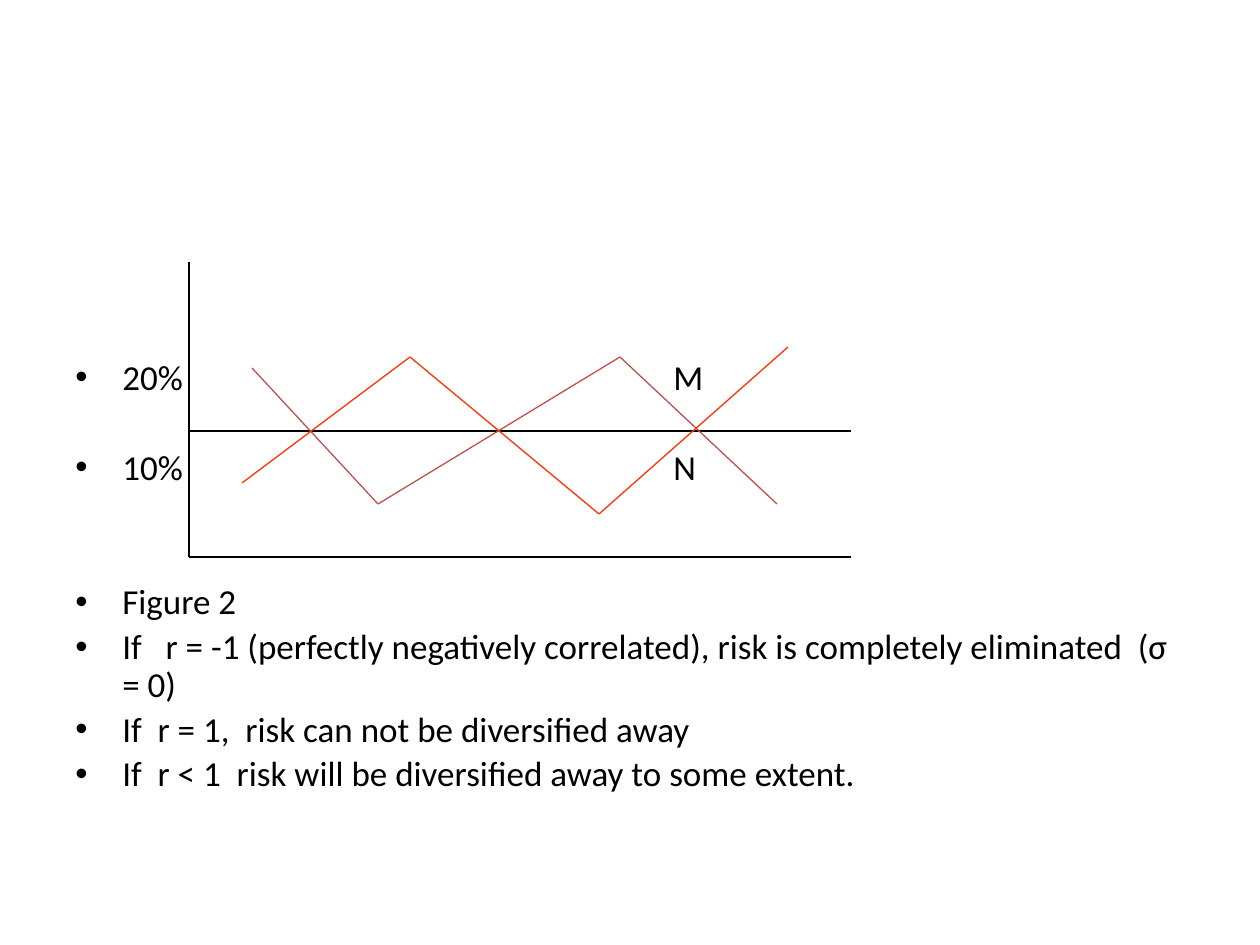
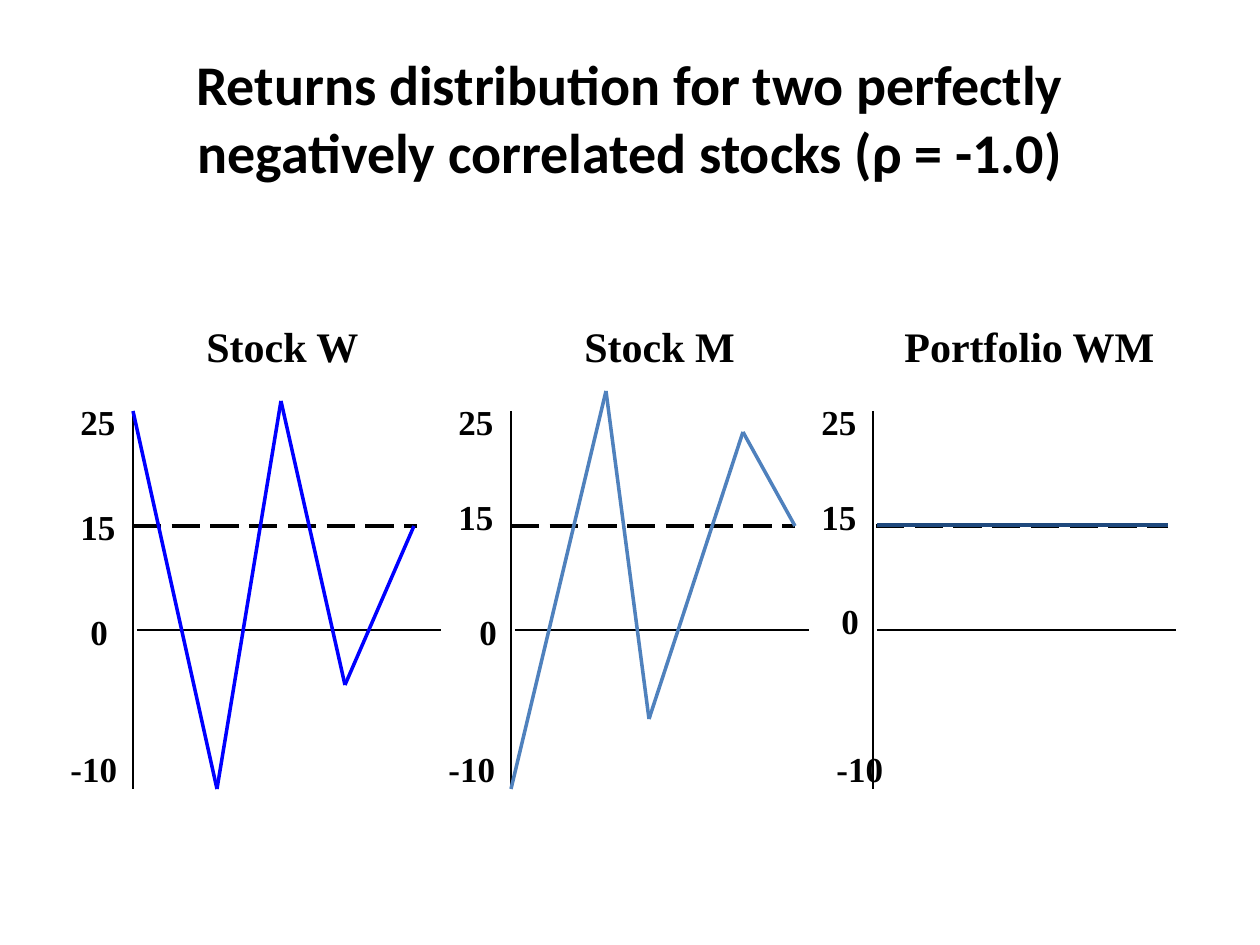
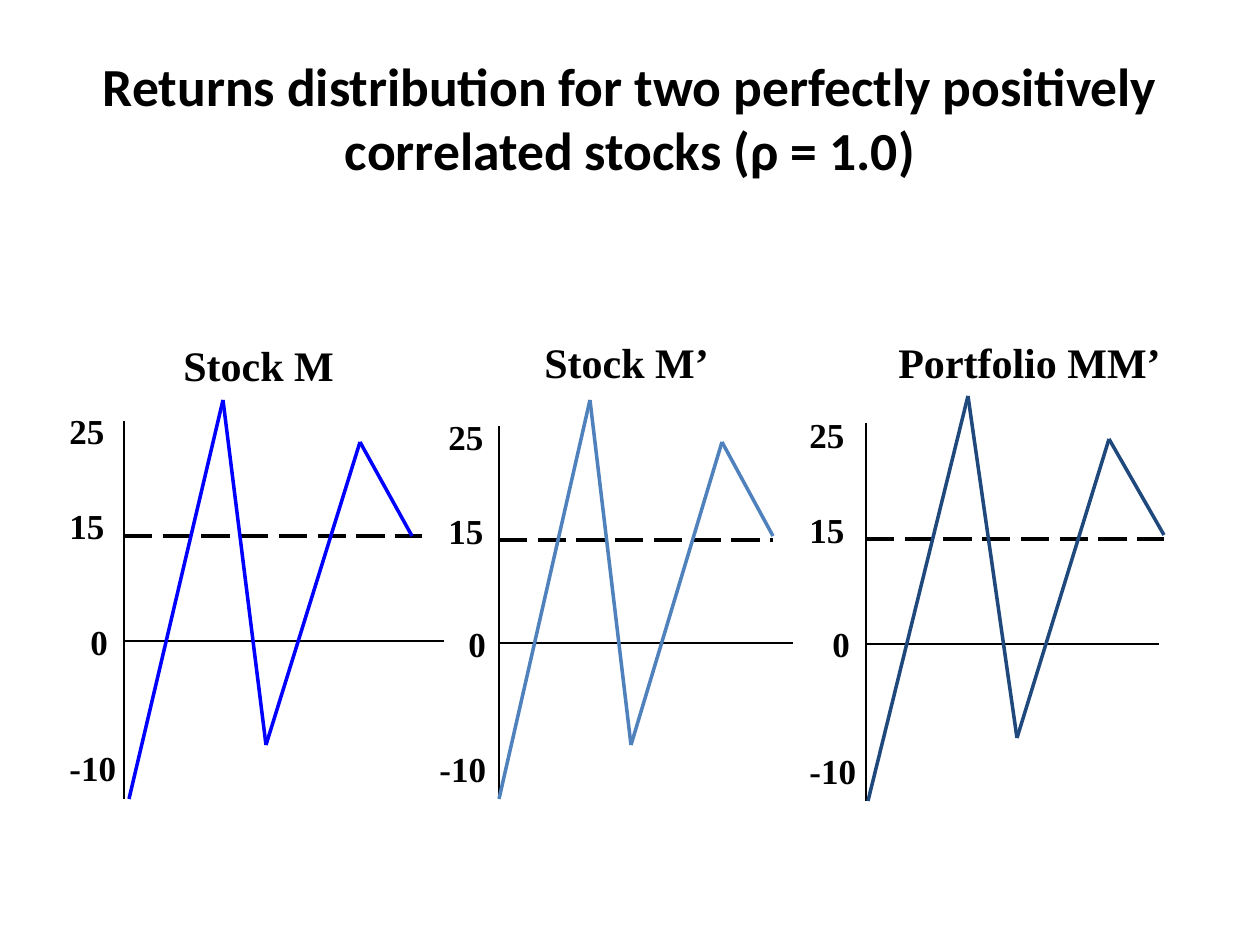
from dataclasses import dataclass
from itertools import pairwise

from lxml.etree import SubElement
from pptx import Presentation
from pptx.dml.color import RGBColor
from pptx.enum.dml import MSO_LINE
from pptx.enum.shapes import MSO_CONNECTOR
from pptx.enum.text import MSO_ANCHOR, MSO_AUTO_SIZE, PP_ALIGN
from pptx.oxml.ns import qn
from pptx.shapes.shapetree import GroupShapes, SlideShapes
from pptx.slide import Slide
from pptx.text.text import TextFrame, _Paragraph
from pptx.util import Emu, Pt

# Shared look
BLACK = RGBColor(0x00, 0x00, 0x00)
BRICK = RGBColor(0xC0, 0x50, 0x4D)
ORANGE = RGBColor(0xFF, 0x33, 0x00)
BLUE = RGBColor(0x00, 0x00, 0xFF)
STEEL = RGBColor(0x4F, 0x81, 0xBD)
NAVY = RGBColor(0x1F, 0x49, 0x7D)
BODY_FONT = "Calibri"
CHART_FONT = "Times New Roman"
PX_PER_INCH = 126
LABEL_HEIGHT, NAME_HEIGHT = 54, 63
LABEL_WIDTHS = {1: 45, 2: 64, 3: 76}  # by number of characters
SERIES_COLORS = (BLUE, STEEL, NAVY)

Point = tuple[int, int]
Shapes = SlideShapes | GroupShapes


@dataclass(frozen=True)
class Bullet:
    text: str
    lines_skipped: int = 0


@dataclass(frozen=True)
class Trend:
    color: RGBColor
    points: tuple[Point, ...]


@dataclass(frozen=True)
class Panel:
    name: str
    name_at: Point
    name_width: int
    axis_x: int
    axis_span: Point
    zero_y: int
    zero_span: Point
    mean_y: int
    mean_span: Point
    labels: dict[str, Point]
    returns: tuple[Point, ...]


# Slide 1: risk figure
BULLETS = (
    Bullet("20%\tM"),
    Bullet("10%\tN", 1),
    Bullet("Figure 2", 2),
    Bullet("If   r = -1 (perfectly negatively correlated), risk is completely eliminated  (σ = 0)"),
    Bullet("If  r = 1,  risk can not be diversified away"),
    Bullet("If  r < 1  risk will be diversified away to some extent."),
)
TRENDS = (
    Trend(BLACK, ((189, 262), (189, 557), (851, 557))),
    Trend(BLACK, ((189, 431), (851, 431))),
    Trend(BRICK, ((252, 368), (378, 504), (620, 357), (777, 504))),
    Trend(ORANGE, ((242, 483), (410, 357), (599, 514), (788, 347))),
)

# Slide 2: negative correlation
NEGATIVE_PANELS = (
    Panel("Stock W", (194, 314), 192, 133, (411, 789), 630, (137, 441), 526, (133, 417),
          {"25": (68, 394), "15": (68, 499), "0": (78, 604), "-10": (58, 741)},
          ((133, 411), (217, 789), (281, 401), (345, 685), (414, 526))),
    Panel("Stock M", (572, 314), 186, 511, (411, 789), 630, (515, 809), 526, (511, 795),
          {"25": (446, 394), "15": (446, 489), "0": (467, 604), "-10": (436, 741)},
          ((511, 789), (606, 391), (649, 719), (743, 432), (795, 526))),
    Panel("Portfolio WM", (892, 314), 284, 873, (411, 789), 630, (877, 1176), 526, (876, 1168),
          {"25": (809, 394), "15": (809, 489), "0": (829, 593), "-10": (824, 741)},
          ((877, 525), (1168, 525))),
)

# Slide 3: positive correlation
POSITIVE_PANELS = (
    Panel("Stock M", (171, 333), 186, 124, (421, 799), 641, (124, 444), 536, (124, 422),
          {"25": (57, 403), "15": (57, 498), "0": (78, 614), "-10": (57, 740)},
          ((129, 799), (223, 400), (266, 745), (360, 442), (412, 536))),
    Panel("Stock M’", (532, 330), 198, 499, (426, 799), 643, (499, 793), 540, (499, 773),
          {"25": (436, 409), "15": (436, 503), "0": (456, 616), "-10": (427, 741)},
          ((499, 799), (590, 400), (631, 745), (722, 442), (773, 536))),
    Panel("Portfolio MM’", (886, 330), 291, 866, (423, 801), 644, (866, 1159), 539, (866, 1164),
          {"25": (797, 407), "15": (797, 502), "0": (820, 616), "-10": (797, 743)},
          ((868, 801), (968, 396), (1017, 738), (1109, 439), (1164, 535))),
)


def px(length: int) -> Emu:
    return Emu(round(length * 914400 / PX_PER_INCH))


# Drawing helpers
def add_line(shapes: Shapes, start: Point, end: Point, color: RGBColor,
             weight: float, dash: MSO_LINE | None = None) -> None:
    line = shapes.add_connector(MSO_CONNECTOR.STRAIGHT, *map(px, start + end))
    line.line.color.rgb = color
    line.line.width = Pt(weight)
    if dash is not None:
        line.line.dash_style = dash
    SubElement(line._element.spPr, qn("a:effectLst"))


def add_path(shapes: Shapes, points: tuple[Point, ...], color: RGBColor, weight: float) -> None:
    for start, end in pairwise(points):
        add_line(shapes, start, end, color, weight)


def add_frame(shapes: Shapes, at: Point, size: Point, wrap: bool = True) -> TextFrame:
    frame = shapes.add_textbox(*map(px, at + size)).text_frame
    frame.word_wrap = wrap
    return frame


def add_run(paragraph: _Paragraph, text: str, font: str, size: float, bold: bool) -> None:
    run = paragraph.add_run()
    run.text = text
    run.font.name = font
    run.font.size = Pt(size)
    run.font.bold = bold
    run.font.color.rgb = BLACK


def add_title(slide: Slide, text: str, size: float) -> None:
    frame = add_frame(slide.shapes, (63, 38), (1134, 158))
    frame.vertical_anchor = MSO_ANCHOR.MIDDLE
    frame.paragraphs[0].alignment = PP_ALIGN.CENTER
    add_run(frame.paragraphs[0], text, BODY_FONT, size, True)


def add_caption(shapes: Shapes, text: str, at: Point, size: Point, points: int) -> None:
    frame = add_frame(shapes, at, size, wrap=False)
    frame.auto_size = MSO_AUTO_SIZE.SHAPE_TO_FIT_TEXT
    add_run(frame.paragraphs[0], text, CHART_FONT, points, True)


def add_bullets(slide: Slide) -> None:
    frame = add_frame(slide.shapes, (63, 220), (1134, 624))
    frame.margin_top = px(140)
    for index, bullet in enumerate(BULLETS):
        paragraph = frame.add_paragraph() if index else frame.paragraphs[0]
        paragraph.line_spacing = 0.9
        paragraph.space_before = Pt(4 + 25.7 * bullet.lines_skipped) if index else Pt(0)
        add_run(paragraph, bullet.text, BODY_FONT, 20, False)
        properties = paragraph._p.get_or_add_pPr()
        properties.set("marL", str(px(47)))
        properties.set("indent", str(-px(47)))
        SubElement(properties, qn("a:buFont"), typeface="Arial")
        SubElement(properties, qn("a:buChar"), char="•")
        if "\t" in bullet.text:
            stops = SubElement(properties, qn("a:tabLst"))
            SubElement(stops, qn("a:tab"), pos=str(px(598)), algn="l")


def add_panel(slide: Slide, panel: Panel, color: RGBColor) -> None:
    shapes = slide.shapes.add_group_shape().shapes
    top, bottom = panel.axis_span
    zero_start, zero_end = panel.zero_span
    mean_start, mean_end = panel.mean_span
    add_line(shapes, (panel.axis_x, top), (panel.axis_x, bottom), BLACK, 1)
    add_line(shapes, (zero_start, panel.zero_y), (zero_end, panel.zero_y), BLACK, 1)
    add_line(shapes, (mean_start, panel.mean_y), (mean_end, panel.mean_y),
             BLACK, 2, MSO_LINE.LONG_DASH)
    add_caption(shapes, panel.name, panel.name_at, (panel.name_width, NAME_HEIGHT), 24)
    for label, at in panel.labels.items():
        add_caption(shapes, label, at, (LABEL_WIDTHS[len(label)], LABEL_HEIGHT), 20)
    add_path(shapes, panel.returns, color, 2)


def add_returns_slide(slide: Slide, title: str, size: float, panels: tuple[Panel, ...]) -> None:
    add_title(slide, title, size)
    for panel, color in zip(panels, SERIES_COLORS):
        add_panel(slide, panel, color)


def main() -> None:
    deck = Presentation()
    deck.slide_width, deck.slide_height = px(1260), px(945)
    blank = deck.slide_layouts[6]

    figure = deck.slides.add_slide(blank)
    add_bullets(figure)
    for trend in TRENDS:
        add_path(figure.shapes, trend.points, trend.color, 0.75)

    add_returns_slide(
        deck.slides.add_slide(blank),
        "Returns distribution for two perfectly negatively correlated stocks (ρ = -1.0)",
        32, NEGATIVE_PANELS)
    add_returns_slide(
        deck.slides.add_slide(blank),
        "Returns distribution for two perfectly positively correlated stocks (ρ = 1.0)",
        30.6, POSITIVE_PANELS)
    deck.save("out.pptx")


if __name__ == "__main__":
    main()
